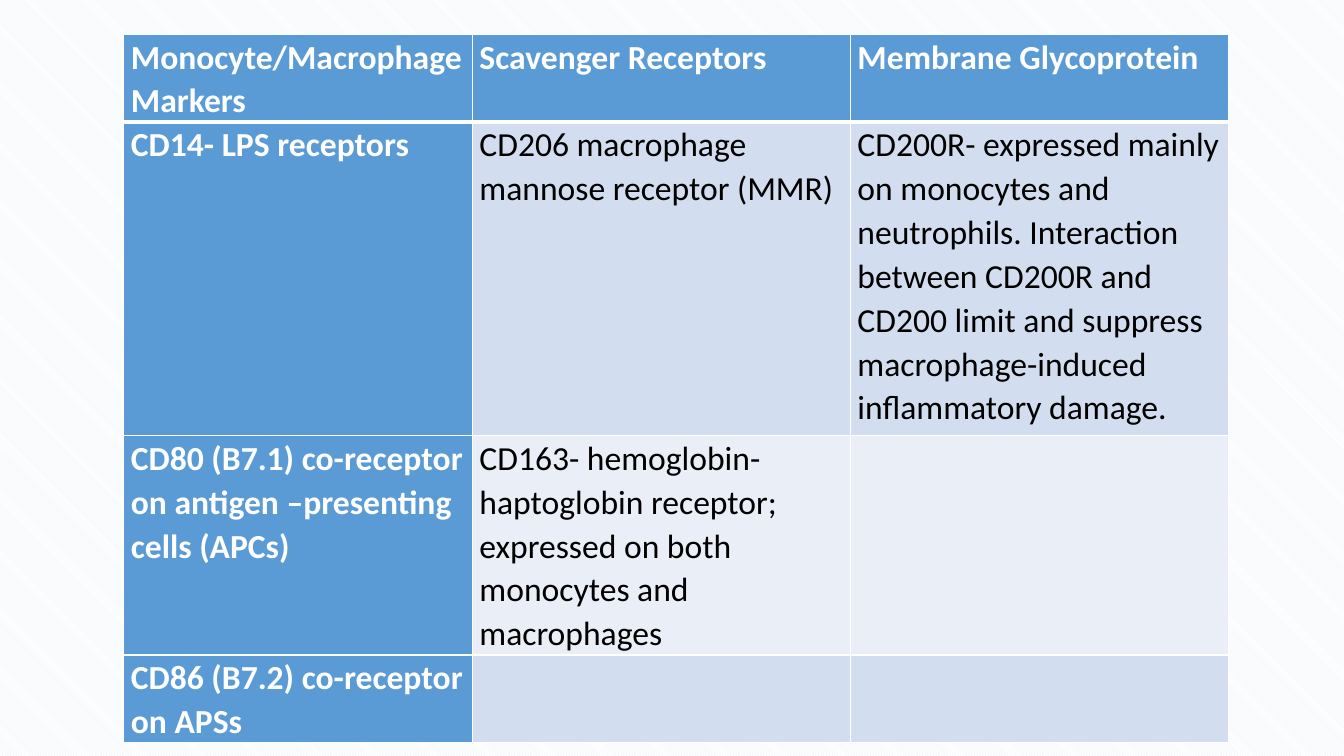
from lxml import etree
from pptx import Presentation
from pptx.dml.color import RGBColor
from pptx.enum.dml import MSO_PATTERN
from pptx.oxml.ns import qn
from pptx.util import Pt

DIAG = MSO_PATTERN.LIGHT_DOWNWARD_DIAGONAL
FONT = "Calibri"
COLORS = {
    "white": "FFFFFF",
    "black": "000000",
    "blue": "5B9BD5",
    "mid": "D2DEEF",
    "light": "EAEFF7",
    "stripe": "DEEBF7",
}
WIDTHS = [249, 270, 270]
HEIGHTS = [60, 224, 149, 60]
MARKERS = [
    ["Monocyte/Macrophage Markers", "Scavenger Receptors", "Membrane Glycoprotein"],
    [
        "CD14- LPS receptors",
        "CD206 macrophage mannose receptor (MMR)",
        "CD200R- expressed mainly on monocytes and neutrophils. Interaction "
        "between CD200R and CD200 limit and suppress macrophage-induced "
        "inflammatory damage.",
    ],
    [
        "CD80 (B7.1) co-receptor on antigen –presenting cells (APCs)",
        "CD163- hemoglobin-haptoglobin receptor; expressed on both "
        "monocytes and macrophages",
        "",
    ],
    ["CD86 (B7.2) co-receptor on APSs", "", ""],
]


def color(name):
    return RGBColor.from_string(COLORS[name])


def set_back(slide):
    fill = slide.background.fill
    fill.patterned()
    fill.pattern = DIAG
    fill.fore_color.rgb = color("stripe")
    fill.back_color.rgb = color("white")


def set_edges(cell, top, bottom):
    props = cell._tc.get_or_add_tcPr()
    edges = {"a:lnL": 1, "a:lnR": 1, "a:lnT": top, "a:lnB": bottom}
    for place, (tag, width) in enumerate(edges.items()):
        line = etree.Element(qn(tag), w=str(Pt(width)))
        fill = etree.SubElement(line, qn("a:solidFill"))
        etree.SubElement(fill, qn("a:srgbClr"), val=COLORS["white"])
        props.insert(place, line)


def set_text(cell, text, ink, bold):
    cell.margin_left = cell.margin_right = Pt(5)
    cell.margin_top = cell.margin_bottom = Pt(0)
    para = cell.text_frame.paragraphs[0]
    para.line_spacing = 1.07
    run = para.add_run()
    run.text = text
    run.font.name = FONT
    run.font.size = Pt(24)
    run.font.bold = bold
    run.font.color.rgb = color(ink)


def add_grid(slide):
    frame = slide.shapes.add_table(
        len(HEIGHTS), len(WIDTHS), Pt(88.5), Pt(24.5), Pt(sum(WIDTHS)), Pt(sum(HEIGHTS))
    )
    table = frame.table
    table.first_col = True
    for col, width in zip(table.columns, WIDTHS):
        col.width = Pt(width)
    for r, (row, height) in enumerate(zip(table.rows, HEIGHTS)):
        row.height = Pt(height)
        band = "mid" if r % 2 else "light"
        for c, cell in enumerate(row.cells):
            head = r == 0 or c == 0
            cell.fill.solid()
            cell.fill.fore_color.rgb = color("blue" if head else band)
            set_edges(cell, 3 if r == 1 else 1, 3 if r == 0 else 1)
            if MARKERS[r][c]:
                set_text(cell, MARKERS[r][c], "white" if head else "black", head)


def main():
    deck = Presentation()
    deck.slide_width = Pt(960)
    deck.slide_height = Pt(540)
    slide = deck.slides.add_slide(deck.slide_layouts[6])
    set_back(slide)
    add_grid(slide)
    deck.save("out.pptx")


if __name__ == "__main__":
    main()
